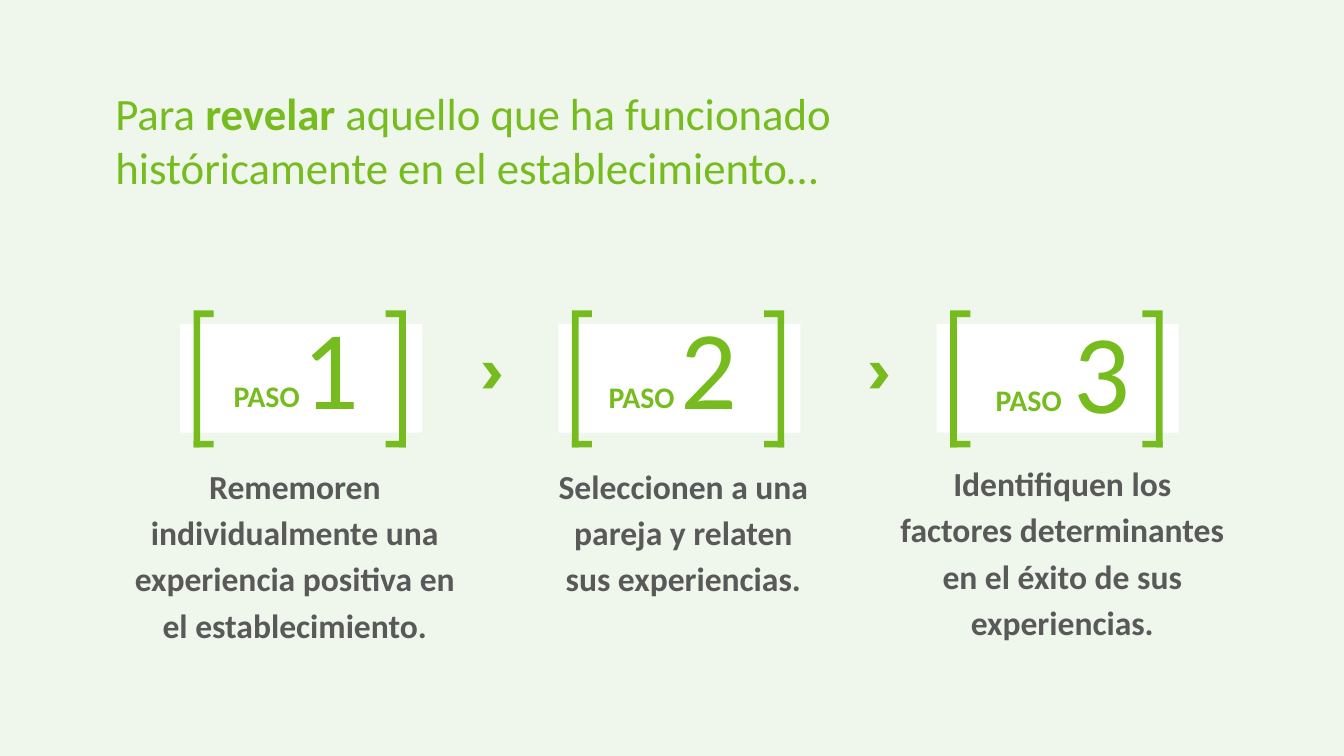
from typing import NamedTuple

from pptx import Presentation
from pptx.dml.color import RGBColor
from pptx.enum.shapes import MSO_SHAPE
from pptx.enum.text import MSO_ANCHOR, MSO_AUTO_SIZE, PP_ALIGN
from pptx.util import Inches, Pt

RECTANGLE, CHEVRON = MSO_SHAPE.RECTANGLE, MSO_SHAPE.CHEVRON
LEFT, CENTER = PP_ALIGN.LEFT, PP_ALIGN.CENTER
TOP, MIDDLE = MSO_ANCHOR.TOP, MSO_ANCHOR.MIDDLE
FIT_SHAPE = MSO_AUTO_SIZE.SHAPE_TO_FIT_TEXT

FONT = "Calibri"
GREEN, GRAY, WHITE, PALE_GREEN = "77BC1F", "595959", "FFFFFF", "EFF6EC"
SLIDE_WIDTH = 10
SLIDE_HEIGHT = SLIDE_WIDTH * 9 / 16

FIRST_CARD_LEFT, LAST_CARD_LEFT, CARD_TOP = 1.34, 6.97, 2.41
CARD_WIDTH, CARD_HEIGHT = 1.8, 0.81
BRACKET_TOP, BRACKET_HEIGHT = 2.31, 1.02
BRACKET_INSET, BRACKET_SPAN = 0.1, 1.58
ARM, STROKE = 0.15, 0.05


class Box(NamedTuple):
    left: float
    top: float
    width: float
    height: float


class Step(NamedTuple):
    number: str
    description: str
    description_box: Box
    label_box: Box
    number_box: Box


STEPS = [
    Step("1", "Rememoren individualmente una experiencia positiva en el establecimiento.",
         Box(0.86, 3.32, 2.67, 0.85), Box(1.64, 2.67, 0.82, 0.35), Box(1.94, 2.23, 1.05, 0.97)),
    Step("2", "Seleccionen a una pareja y relaten sus experiencias.",
         Box(4.04, 3.32, 2.09, 1.1), Box(4.43, 2.68, 0.82, 0.35), Box(4.75, 2.23, 1.05, 0.97)),
    Step("3", "Identifiquen los factores determinantes en el éxito de sus experiencias.",
         Box(6.59, 3.3, 2.63, 1.13), Box(7.31, 2.7, 0.82, 0.35), Box(7.67, 2.26, 1.05, 0.97)),
]
CARD_PITCH = (LAST_CARD_LEFT - FIRST_CARD_LEFT) / (len(STEPS) - 1)
ARROWS = [Box(left, 2.7, 0.14, 0.19) for left in (3.59, 6.47)]


def color(value: str) -> RGBColor:
    return RGBColor.from_string(value)


def inches(box: Box) -> list:
    return [Inches(length) for length in box]


def add_filled(shapes, kind, box: Box, fill: str) -> None:
    shape = shapes.add_shape(kind, *inches(box))
    shape.shadow.inherit = False
    shape.fill.solid()
    shape.fill.fore_color.rgb = color(fill)
    shape.line.fill.background()


def add_text(shapes, box: Box, text: str, size: float, font_color: str, bold: bool = False,
             align=CENTER, anchor=TOP, spacing: float = 1.0):
    """Add a one-paragraph text box with equal insets and return its paragraph."""
    frame = shapes.add_textbox(*inches(box)).text_frame
    frame.word_wrap = True
    frame.vertical_anchor = anchor
    frame.margin_left = frame.margin_right = Inches(0.1)
    frame.margin_top = frame.margin_bottom = Inches(0.1)
    paragraph = frame.paragraphs[0]
    paragraph.text = text
    paragraph.alignment = align
    paragraph.line_spacing = spacing
    font = paragraph.font
    font.name, font.size, font.bold = FONT, Pt(size), bold
    font.color.rgb = color(font_color)
    return paragraph


def add_bracketed_card(shapes, left: float) -> None:
    """Group a white card with the square brackets that overlap its sides."""
    group = shapes.add_group_shape().shapes
    add_filled(group, RECTANGLE, Box(left, CARD_TOP, CARD_WIDTH, CARD_HEIGHT), WHITE)
    bracket_left = left + BRACKET_INSET
    bracket_right = bracket_left + BRACKET_SPAN
    for arm_left, bar_left in ((bracket_left, bracket_left),
                               (bracket_right - ARM, bracket_right - STROKE)):
        for arm_top in (BRACKET_TOP, BRACKET_TOP + BRACKET_HEIGHT - STROKE):
            add_filled(group, RECTANGLE, Box(arm_left, arm_top, ARM, STROKE), GREEN)
        bar = Box(bar_left, BRACKET_TOP + STROKE, STROKE, BRACKET_HEIGHT - STROKE)
        add_filled(group, RECTANGLE, bar, GREEN)


def add_title(shapes) -> None:
    frame = shapes.add_textbox(*inches(Box(0.76, 0.59, 6.24, 0.91))).text_frame
    frame.word_wrap = True
    frame.auto_size = FIT_SHAPE
    paragraph = frame.paragraphs[0]
    for text, bold in (("Para ", False), ("revelar", True),
                       (" aquello que ha funcionado históricamente en el establecimiento…", False)):
        run = paragraph.add_run()
        run.text = text
        run.font.bold = bold
    paragraph.font.name, paragraph.font.size = FONT, Pt(24)
    paragraph.font.color.rgb = color(GREEN)


def add_step_label(shapes, box: Box) -> None:
    paragraph = add_text(shapes, box, "PASO", 16, GREEN, bold=True, align=LEFT, spacing=1.15)
    paragraph.space_after = Pt(16)
    properties = paragraph._p.get_or_add_pPr()
    properties.set("marL", "0")
    properties.set("indent", str(Inches(-0.08)))


def main() -> None:
    presentation = Presentation()
    presentation.slide_width = Inches(SLIDE_WIDTH)
    presentation.slide_height = Inches(SLIDE_HEIGHT)
    slide = presentation.slides.add_slide(presentation.slide_layouts[6])
    shapes = slide.shapes

    add_filled(shapes, RECTANGLE, Box(0, 0, SLIDE_WIDTH, SLIDE_HEIGHT), PALE_GREEN)
    for step in STEPS:
        add_text(shapes, step.description_box, step.description, 18, GRAY, bold=True, spacing=1.15)
    for index in range(len(STEPS)):
        add_bracketed_card(shapes, FIRST_CARD_LEFT + index * CARD_PITCH)
    for step in STEPS:
        add_step_label(shapes, step.label_box)
    for arrow in ARROWS:
        add_filled(shapes, CHEVRON, arrow, GREEN)
    for step in STEPS:
        add_text(shapes, step.number_box, step.number, 60, GREEN, anchor=MIDDLE)
    add_title(shapes)

    presentation.save("out.pptx")


if __name__ == "__main__":
    main()
